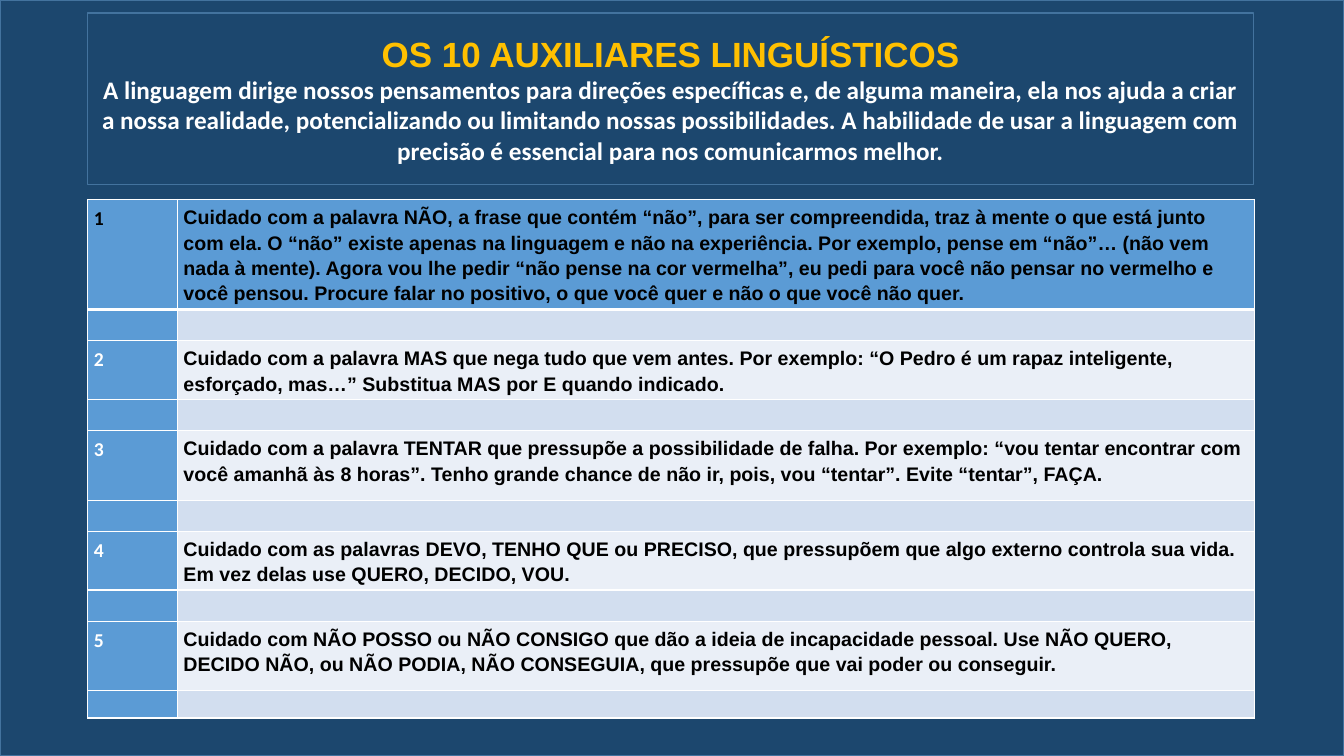
from lxml import etree
from pptx import Presentation
from pptx.dml.color import RGBColor
from pptx.enum.shapes import MSO_SHAPE
from pptx.enum.text import MSO_ANCHOR, MSO_AUTO_SIZE, PP_ALIGN
from pptx.oxml.ns import qn
from pptx.util import Inches, Pt

COLORS = {
    "navy": "1C476E", "edge": "43739E", "blue": "5B9BD5", "pale": "D2DEEF",
    "light": "EAEFF7", "gold": "FFC000", "white": "FFFFFF", "black": "000000",
}

TITLE = "OS 10 AUXILIARES LINGUÍSTICOS"
INTRO = (
    "A linguagem dirige nossos pensamentos para direções específicas e, de alguma "
    "maneira, ela nos ajuda a criar a nossa realidade, potencializando ou limitando "
    "nossas possibilidades. A habilidade de usar a linguagem com precisão é essencial "
    "para nos comunicarmos melhor."
)
TIPS = [
    "Cuidado com a palavra NÃO, a frase que contém “não”, para ser compreendida, traz "
    "à mente o que está junto com ela. O “não” existe apenas na linguagem e não na "
    "experiência. Por exemplo, pense em “não”… (não vem nada à mente). Agora vou lhe "
    "pedir “não pense na cor vermelha”, eu pedi para você não pensar no vermelho e "
    "você pensou. Procure falar no positivo, o que você quer e não o que você não quer.",
    "Cuidado com a palavra MAS que nega tudo que vem antes. Por exemplo: “O Pedro é um "
    "rapaz inteligente, esforçado, mas…” Substitua MAS por E quando indicado.",
    "Cuidado com a palavra TENTAR que pressupõe a possibilidade de falha. Por exemplo: "
    "“vou tentar encontrar com você amanhã às 8 horas”. Tenho grande chance de não ir, "
    "pois, vou “tentar”. Evite “tentar”, FAÇA.",
    "Cuidado com as palavras DEVO, TENHO QUE ou PRECISO, que pressupõem que algo "
    "externo controla sua vida. Em vez delas use QUERO, DECIDO, VOU.",
    "Cuidado com NÃO POSSO ou NÃO CONSIGO que dão a ideia de incapacidade pessoal. "
    "Use NÃO QUERO, DECIDO NÃO, ou NÃO PODIA, NÃO CONSEGUIA, que pressupõe que vai "
    "poder ou conseguir.",
]
HEIGHTS = [1.09, 0.31, 0.58, 0.31, 0.69, 0.31, 0.58, 0.31, 0.69, 0.27]
WIDTHS = [0.89, 10.68]


def add_run(para, text, size, font, color):
    run = para.add_run()
    run.text = text
    run.font.size = Pt(size)
    run.font.name = font
    run.font.bold = True
    run.font.color.rgb = RGBColor.from_string(COLORS[color])


def set_box(shape):
    """Give a shape the navy fill and thin edge."""
    shape.fill.solid()
    shape.fill.fore_color.rgb = RGBColor.from_string(COLORS["navy"])
    shape.line.color.rgb = RGBColor.from_string(COLORS["edge"])
    shape.line.width = Pt(1)


prs = Presentation()
prs.slide_width = Inches(13.33)
prs.slide_height = Inches(7.5)
slide = prs.slides.add_slide(prs.slide_layouts[5])
shapes = slide.shapes

# Backdrop
back = shapes.add_shape(MSO_SHAPE.RECTANGLE, 0, 0, prs.slide_width, prs.slide_height)
back.shadow.inherit = False
set_box(back)

# Table: each tip row is followed by an empty band
frame = shapes.add_table(
    len(HEIGHTS), 2, Inches(0.87), Inches(1.98),
    Inches(sum(WIDTHS)), Inches(sum(HEIGHTS)),
)
table = frame.table
for col, width in zip(table.columns, WIDTHS):
    col.width = Inches(width)

for r, height in enumerate(HEIGHTS):
    table.rows[r].height = Inches(height)
    tip, band = divmod(r, 2)
    for c, cell in enumerate(table.rows[r].cells):
        cell.margin_left = cell.margin_right = Inches(0.06)
        cell.margin_top = cell.margin_bottom = Inches(0.04)

        props = cell._tc.get_or_add_tcPr()
        for side in "LRTB":
            thick = (r, side) in [(0, "B"), (1, "T")]
            line = etree.SubElement(props, qn(f"a:ln{side}"), w=str(Pt(3 if thick else 1)))
            paint = etree.SubElement(line, qn("a:solidFill"))
            etree.SubElement(paint, qn("a:srgbClr"), val=COLORS["white"])

        fill = "blue" if r == 0 or c == 0 else "pale" if band else "light"
        cell.fill.solid()
        cell.fill.fore_color.rgb = RGBColor.from_string(COLORS[fill])

        para = cell.text_frame.paragraphs[0]
        if band:
            etree.SubElement(para._p, qn("a:endParaRPr"), sz="1000")
            continue
        para.line_spacing = 1.15
        if c == 0:
            add_run(para, str(tip + 1), 14, "Calibri", "white" if r else "black")
        else:
            add_run(para, TIPS[tip], 14, "Arial", "black")

# Title box, brought in front of the backdrop
title = shapes.title
shapes._spTree.append(title._element)
title.left, title.top = Inches(0.87), Inches(0.13)
title.width, title.height = Inches(11.56), Inches(1.7)
set_box(title)
text = title.text_frame
text.word_wrap = True
text.auto_size = MSO_AUTO_SIZE.NONE
text.vertical_anchor = MSO_ANCHOR.MIDDLE
head, intro = text.paragraphs[0], text.add_paragraph()
head.alignment = intro.alignment = PP_ALIGN.CENTER
add_run(head, TITLE, 25, "Arial", "gold")
add_run(intro, INTRO, 18, "Calibri", "white")

prs.save("out.pptx")
